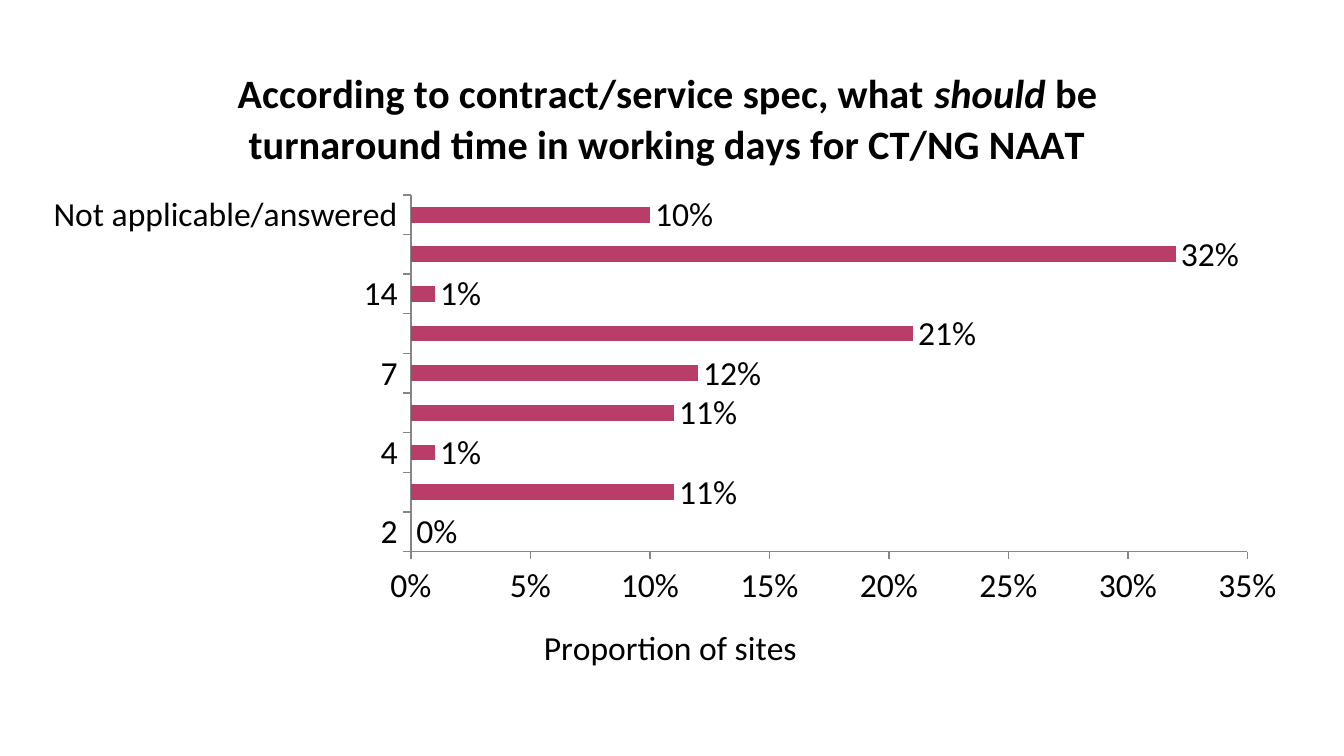
from typing import NamedTuple

from lxml.etree import SubElement, _Element
from pptx import Presentation
from pptx.chart.axis import _BaseAxis
from pptx.chart.data import CategoryChartData
from pptx.dml.color import RGBColor
from pptx.enum.chart import XL_CHART_TYPE, XL_LABEL_POSITION, XL_TICK_MARK
from pptx.oxml.ns import qn
from pptx.text.text import Font, _Paragraph
from pptx.util import Pt

BLACK = RGBColor(0x00, 0x00, 0x00)
GREY = RGBColor(0x86, 0x86, 0x86)
RASPBERRY = RGBColor(0xB8, 0x3D, 0x68)

BODY_FORMAT = {"name": "Calibri", "size": Pt(18), "bold": False}
TITLE_FORMAT = {"name": "Calibri", "size": Pt(21.6), "bold": True}


class Turnaround(NamedTuple):
    share: float
    days: str = ""


class TitleRun(NamedTuple):
    text: str
    italic: bool = False


# Every second bar is labelled, from the bottom up.
TURNAROUNDS = [
    Turnaround(0.00, "2"),
    Turnaround(0.11),
    Turnaround(0.01, "4"),
    Turnaround(0.11),
    Turnaround(0.12, "7"),
    Turnaround(0.21),
    Turnaround(0.01, "14"),
    Turnaround(0.32),
    Turnaround(0.10, "Not applicable/answered"),
]
QUESTION = [
    TitleRun("According to contract/service spec, what "),
    TitleRun("should", italic=True),
    TitleRun(" be turnaround time in working days for CT/NG NAAT"),
]


def format_font(font: Font, settings: dict) -> None:
    for attribute, value in settings.items():
        setattr(font, attribute, value)
    font.color.rgb = BLACK


def write_runs(paragraph: _Paragraph, runs: list[TitleRun], settings: dict) -> None:
    for part in runs:
        run = paragraph.add_run()
        run.text = part.text
        format_font(run.font, settings)
        run.font.italic = part.italic


def place(element: _Element, position: int, **fractions: float) -> None:
    """Give a chart part a manual layout, in fractions of the chart area."""
    for old_layout in element.findall(qn("c:layout")):
        element.remove(old_layout)
    layout = SubElement(element, qn("c:layout"))
    element.insert(position, layout)
    manual = SubElement(layout, qn("c:manualLayout"))
    if "w" in fractions:
        SubElement(manual, qn("c:layoutTarget")).set("val", "inner")
    for side in ("xMode", "yMode"):
        SubElement(manual, qn(f"c:{side}")).set("val", "edge")
    for side, fraction in fractions.items():
        SubElement(manual, qn(f"c:{side}")).set("val", str(fraction))


def style_axis(axis: _BaseAxis) -> None:
    axis.has_major_gridlines = False
    axis.major_tick_mark = XL_TICK_MARK.OUTSIDE
    axis.minor_tick_mark = XL_TICK_MARK.NONE
    axis.format.line.color.rgb = GREY
    axis.format.line.width = Pt(0.75)
    format_font(axis.tick_labels.font, BODY_FORMAT)


def main() -> None:
    presentation = Presentation()
    presentation.slide_width, presentation.slide_height = Pt(720), Pt(405)
    slide = presentation.slides.add_slide(presentation.slide_layouts[6])

    survey = CategoryChartData(number_format="0%")
    survey.categories = [answer.days for answer in TURNAROUNDS]
    survey.add_series("Series 1", [answer.share for answer in TURNAROUNDS])
    chart = slide.shapes.add_chart(
        XL_CHART_TYPE.BAR_CLUSTERED, Pt(16.5), Pt(23), Pt(679), Pt(354), survey
    ).chart
    chart.has_legend = False
    format_font(chart.font, BODY_FORMAT)

    chart.has_title = True
    question = chart.chart_title
    write_runs(question.text_frame.paragraphs[0], QUESTION, TITLE_FORMAT)
    place(question._element, 1, x=0.16, y=0.03)
    place(chart._chartSpace.chart.plotArea, 0, x=0.3, y=0.23, w=0.66, h=0.54)

    style_axis(chart.category_axis)
    share_axis = chart.value_axis
    style_axis(share_axis)
    share_axis.minimum_scale, share_axis.maximum_scale = 0, 0.35
    share_axis.major_unit = 0.05
    share_axis.tick_labels.number_format = "0%"
    share_axis.tick_labels.number_format_is_linked = False
    share_axis.has_title = True
    caption = share_axis.axis_title
    write_runs(
        caption.text_frame.paragraphs[0], [TitleRun("Proportion of sites")], BODY_FORMAT
    )
    place(caption._element, 1, x=0.4, y=0.87)

    bars = chart.plots[0]
    bars.gap_width = 150
    bars.vary_by_categories = False
    fill = bars.series[0].format.fill
    fill.solid()
    fill.fore_color.rgb = RASPBERRY
    bars.has_data_labels = True
    labels = bars.data_labels
    labels.show_value = True
    labels.position = XL_LABEL_POSITION.OUTSIDE_END
    labels.number_format = "0%"
    labels.number_format_is_linked = False
    format_font(labels.font, BODY_FORMAT)

    presentation.save("out.pptx")


if __name__ == "__main__":
    main()
